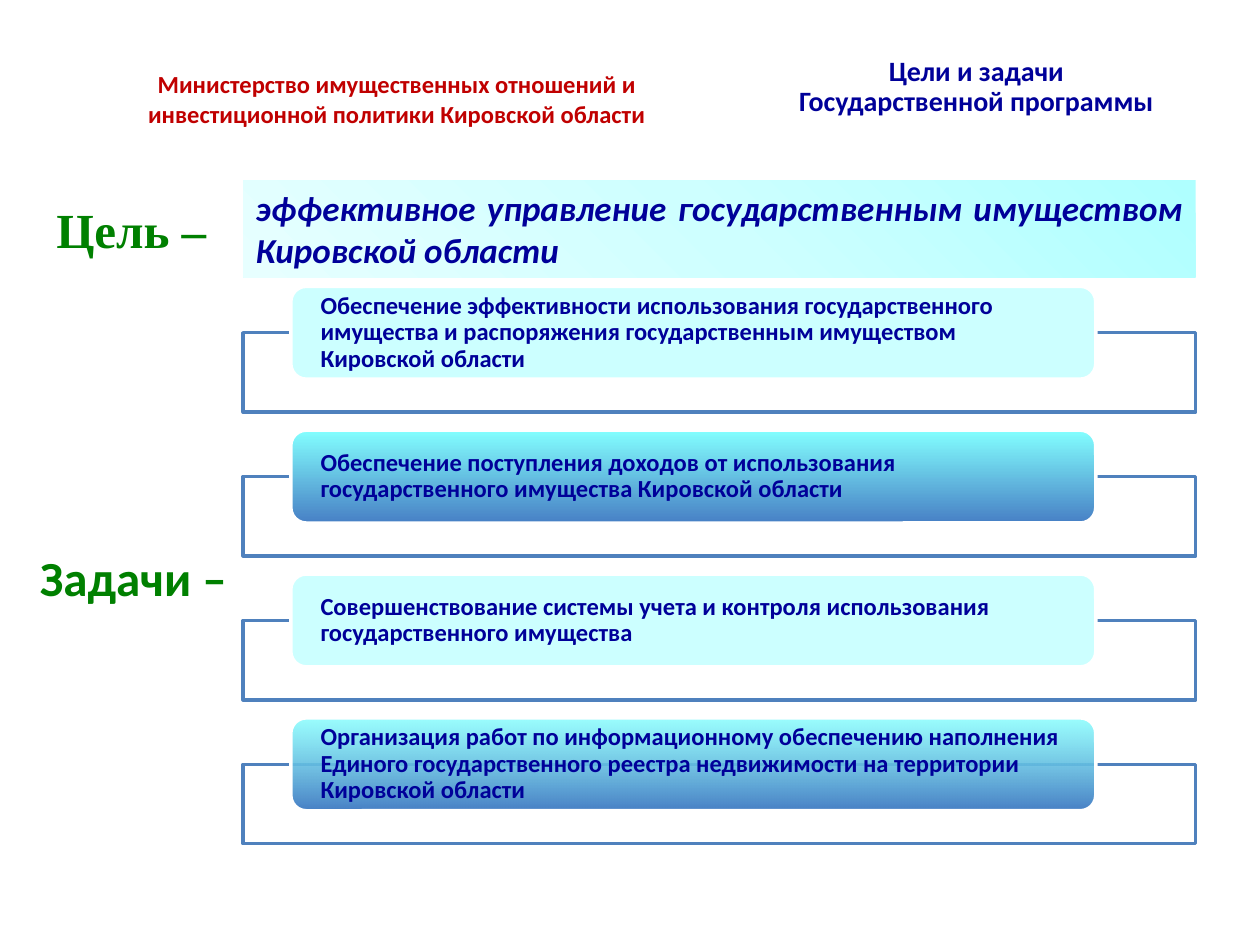
import pptx
import pptx.util
import pptx.dml.color
import pptx.enum.shapes
import pptx.enum.text
import pptx.oxml
import pptx.oxml.ns

Pt = pptx.util.Pt
RGB = pptx.dml.color.RGBColor
SHAPE = pptx.enum.shapes.MSO_SHAPE
ALIGN = pptx.enum.text.PP_ALIGN
ANCHOR = pptx.enum.text.MSO_ANCHOR

# Content
TITLE = ["Цели и задачи", "Государственной программы"]
MINISTRY = ["Министерство имущественных отношений и инвестиционной политики Кировской области"]
GOAL_LABEL = ["Цель –"]
TASKS_LABEL = ["Задачи –"]
GOAL = ["эффективное управление государственным имуществом Кировской области"]
TASKS = [
    ("Обеспечение эффективности использования государственного имущества и "
     "распоряжения государственным имуществом Кировской области", "light"),
    ("Обеспечение поступления доходов от использования государственного "
     "имущества Кировской области", "deep"),
    ("Совершенствование системы учета и контроля использования "
     "государственного имущества", "light"),
    ("Организация работ по информационному обеспечению наполнения Единого "
     "государственного реестра недвижимости на территории Кировской области", "sheer"),
]

# Gradient stops are (position %, colour, opacity %); angles run counter-clockwise
THEME = {
    "font": "Calibri", "serif": "Times New Roman",
    "navy": "000099", "green": "008000", "red": "C00000",
    "white": "FFFFFF", "frame": "4F81BD",
    "title": 16, "body": 14, "goal": 20, "label": 28,
    "fills": {
        "light": "CCFFFF",
        "deep": ([(0, "83FFFF", 100), (100, "4780C5", 100)], 270),
        "sheer": ([(0, "83FFFF", 80), (100, "4780C5", 100)], 270),
        "goal": ([(0, "AFFFFF", 100), (50, "CEFFFF", 100), (100, "E7FFFF", 100)], 225),
    },
}

# Layout in points
FRAME_X, FRAME_W, FRAME_H = 139, 544.3, 45.4
CARD_X, CARD_W, CARD_H = 166.2, 460, 53.1
FIRST_Y, PITCH = 163.6, 82.2

prs = pptx.Presentation()
prs.slide_width, prs.slide_height = Pt(720), Pt(540)
slide = prs.slides.add_slide(prs.slide_layouts[6])


def write(sp, lines, size, color, align=ALIGN.LEFT, spacing=1.0, font=THEME["font"],
          italic=False, anchor=ANCHOR.TOP, margins=(7.2, 3.6, 7.2, 3.6)):
    tf = sp.text_frame
    sides = ("margin_left", "margin_top", "margin_right", "margin_bottom")
    frame = dict(zip(sides, map(Pt, margins)), word_wrap=True, vertical_anchor=anchor)
    for name, value in frame.items():
        setattr(tf, name, value)
    for i, line in enumerate(lines):
        p = tf.paragraphs[0] if i == 0 else tf.add_paragraph()
        p.alignment, p.line_spacing = align, spacing
        r = p.add_run()
        r.text = line
        for name, value in {"name": font, "size": Pt(size), "bold": True,
                            "italic": italic}.items():
            setattr(r.font, name, value)
        r.font.color.rgb = RGB.from_string(color)


def text_box(box, lines, size, color, **fmt):
    write(slide.shapes.add_textbox(*map(Pt, box)), lines, size, color, **fmt)


def paint(sp, fill):
    if isinstance(fill, str):
        sp.fill.solid()
        sp.fill.fore_color.rgb = RGB.from_string(fill)
        return
    stops, angle = fill
    sp.fill.gradient()
    sp.fill.gradient_angle = angle
    gs_list = next(sp._element.iter(pptx.oxml.ns.qn("a:gsLst")))
    for gs in list(gs_list):
        gs_list.remove(gs)
    for pos, color, opacity in stops:
        gs_list.append(pptx.oxml.parse_xml(
            f'<a:gs {pptx.oxml.ns.nsdecls("a")} pos="{pos * 1000}"><a:srgbClr val="{color}">'
            f'<a:alpha val="{opacity * 1000}"/></a:srgbClr></a:gs>'))


def box_shape(kind, box, fill, line=None):
    sp = slide.shapes.add_shape(kind, *map(Pt, box))
    sp.shadow.inherit = False
    paint(sp, fill)
    if line:
        sp.line.color.rgb = RGB.from_string(line)
        sp.line.width = Pt(2)
    else:
        sp.line.fill.background()
    return sp


# Headings
text_box((415.4, 11.5, 285.1, 79.9), TITLE, THEME["title"], THEME["navy"],
         align=ALIGN.CENTER, spacing=0.9, margins=(6.5, 21.2, 6.5, 3.6))
text_box((74.9, 21.6, 303.8, 69.8), MINISTRY, THEME["body"], THEME["red"],
         align=ALIGN.CENTER, anchor=ANCHOR.MIDDLE)

# Goal
text_box((25.2, 110.2, 124.6, 41), GOAL_LABEL, THEME["label"], THEME["green"],
         font=THEME["serif"])
goal = box_shape(SHAPE.RECTANGLE, (FRAME_X, 103, FRAME_W, 55.4), THEME["fills"]["goal"])
write(goal, GOAL, THEME["goal"], THEME["navy"], align=ALIGN.JUSTIFY, italic=True)

# Tasks: each card overlaps the top edge of its frame
text_box((11, 309.6, 130.3, 41), TASKS_LABEL, THEME["label"], THEME["green"],
         align=ALIGN.CENTER)
for i, (task, fill) in enumerate(TASKS):
    y = FIRST_Y + i * PITCH
    box_shape(SHAPE.RECTANGLE, (FRAME_X, y + CARD_H / 2, FRAME_W, FRAME_H),
              THEME["white"], THEME["frame"])
    card = box_shape(SHAPE.ROUNDED_RECTANGLE, (CARD_X, y, CARD_W, CARD_H),
                     THEME["fills"][fill], THEME["white"])
    write(card, [task], THEME["body"], THEME["navy"], spacing=0.9,
          anchor=ANCHOR.MIDDLE, margins=(14.4, 0, 14.4, 0))

prs.save("out.pptx")
